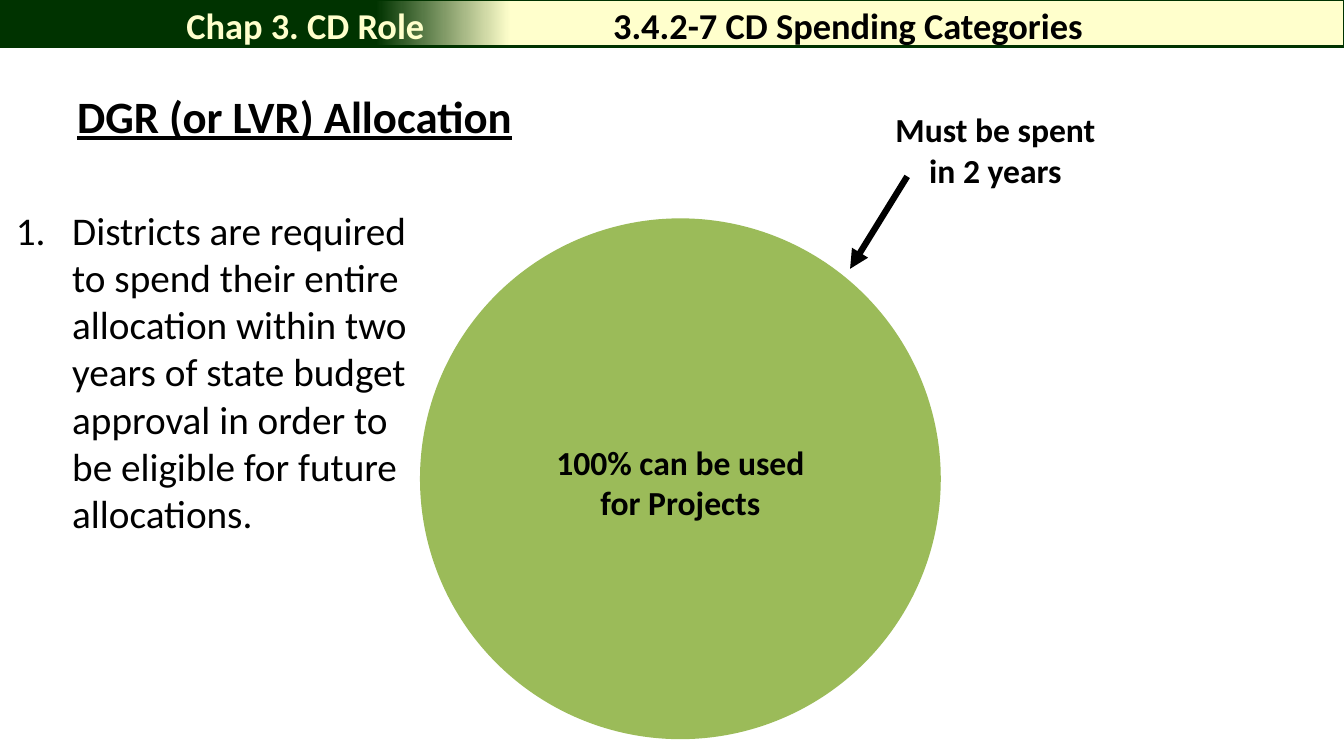
import pptx
import pptx.dml.color
import pptx.enum.shapes
import pptx.enum.text
import pptx.oxml
import pptx.oxml.ns
import pptx.util

SLIDE_WIDTH = pptx.util.Inches(13.33)
SLIDE_HEIGHT = pptx.util.Inches(7.5)
COLUMNS, ROWS = 80, 45
BLACK, FOREST, CREAM, LEAF = "000000", "003300", "FFFFCC", "9BBB59"
ALIGN = pptx.enum.text.PP_ALIGN
ANCHOR = pptx.enum.text.MSO_ANCHOR
SHAPE = pptx.enum.shapes.MSO_SHAPE


def color(value):
    return pptx.dml.color.RGBColor.from_string(value)


def place(column, row):
    return int(SLIDE_WIDTH * column / COLUMNS), int(SLIDE_HEIGHT * row / ROWS)


def area(column, row, columns, rows):
    return place(column, row) + place(columns, rows)


def add_element(parent, tag, **attributes):
    element = pptx.oxml.parse_xml(f"<a:{tag} {pptx.oxml.ns.nsdecls('a')}/>")
    for name, value in attributes.items():
        element.set(name, value)
    parent.append(element)


def write(box, text, size, fill=BLACK, align=ALIGN.LEFT, anchor=ANCHOR.TOP, bold=True):
    frame = box.text_frame
    frame.word_wrap = True
    frame.auto_size = pptx.enum.text.MSO_AUTO_SIZE.NONE
    frame.vertical_anchor = anchor
    para = frame.paragraphs[0]
    para.alignment = align
    span = para.add_run()
    span.text = text
    span.font.name = "Calibri"
    span.font.size = pptx.util.Pt(size)
    span.font.bold = bold
    span.font.color.rgb = color(fill)
    return para


def add_text(page, grid, text, size, **style):
    return write(page.shapes.add_textbox(*area(*grid)), text, size, **style)


def add_plain_shape(page, kind, grid):
    shape = page.shapes.add_shape(kind, *area(*grid))
    shape.shadow.inherit = False
    shape.line.fill.background()
    return shape


def add_header(page, chapter, topic):
    band = add_plain_shape(page, SHAPE.RECTANGLE, (0, 0, COLUMNS, 2.75))
    band.fill.gradient()
    band.fill.gradient_angle = 0
    for stop, (position, value) in zip(band.fill.gradient_stops, ((0.28, FOREST), (0.38, CREAM))):
        stop.position = position
        stop.color.rgb = color(value)
    band.line.color.rgb = color(FOREST)
    band.line.width = pptx.util.Pt(2)

    title = page.shapes.title
    title.element.addprevious(band.element)
    title.left, title.top, title.width, title.height = area(31, 0, 39, 3)
    write(title, topic, 26, align=ALIGN.CENTER, anchor=ANCHOR.MIDDLE)
    add_text(page, (10.5, 0, 21.5, 3), chapter, 26, fill=CREAM, anchor=ANCHOR.MIDDLE)


def add_numbered_item(page, grid, text):
    para = add_text(page, grid, text, 28, bold=False)
    properties = para._p.get_or_add_pPr()
    indent = pptx.util.Inches(0.56)
    properties.set("marL", str(indent))
    properties.set("indent", str(-indent))
    add_element(properties, "buFont", typeface="+mj-lt")
    add_element(properties, "buAutoNum", type="arabicPeriod")


def add_arrow(page, start, end):
    arrow = page.shapes.add_connector(
        pptx.enum.shapes.MSO_CONNECTOR.STRAIGHT, *place(*start), *place(*end)
    )
    arrow.line.color.rgb = color(BLACK)
    arrow.line.width = pptx.util.Pt(4.5)
    add_element(arrow.line._get_or_add_ln(), "tailEnd", type="triangle")
    add_element(arrow.element.spPr, "effectLst")


def main():
    deck = pptx.Presentation()
    deck.slide_width, deck.slide_height = SLIDE_WIDTH, SLIDE_HEIGHT
    page = deck.slides.add_slide(deck.slide_layouts.get_by_name("Title Only"))

    add_header(page, "Chap 3. CD Role", "3.4.2-7 CD Spending Categories")

    circle = add_plain_shape(page, SHAPE.OVAL, (25, 13, 31, 31))
    circle.fill.solid()
    circle.fill.fore_color.rgb = color(LEAF)

    heading = add_text(page, (4, 5, 72, 4), "DGR (or LVR) Allocation", 32)
    heading.runs[0].font.underline = True

    add_text(page, (31.25, 26, 18.5, 5.5), "100% can be used for Projects", 24, align=ALIGN.CENTER)
    add_text(page, (52, 6.2, 14.5, 5.5), "Must be spent in 2 years", 24, align=ALIGN.CENTER)
    add_arrow(page, (54, 10.5), (50.6, 16))
    add_numbered_item(
        page,
        (0.35, 12, 25, 31),
        "Districts are required to spend their entire allocation within two years "
        "of state budget approval in order to be eligible for future allocations.",
    )

    deck.save("out.pptx")


if __name__ == "__main__":
    main()
